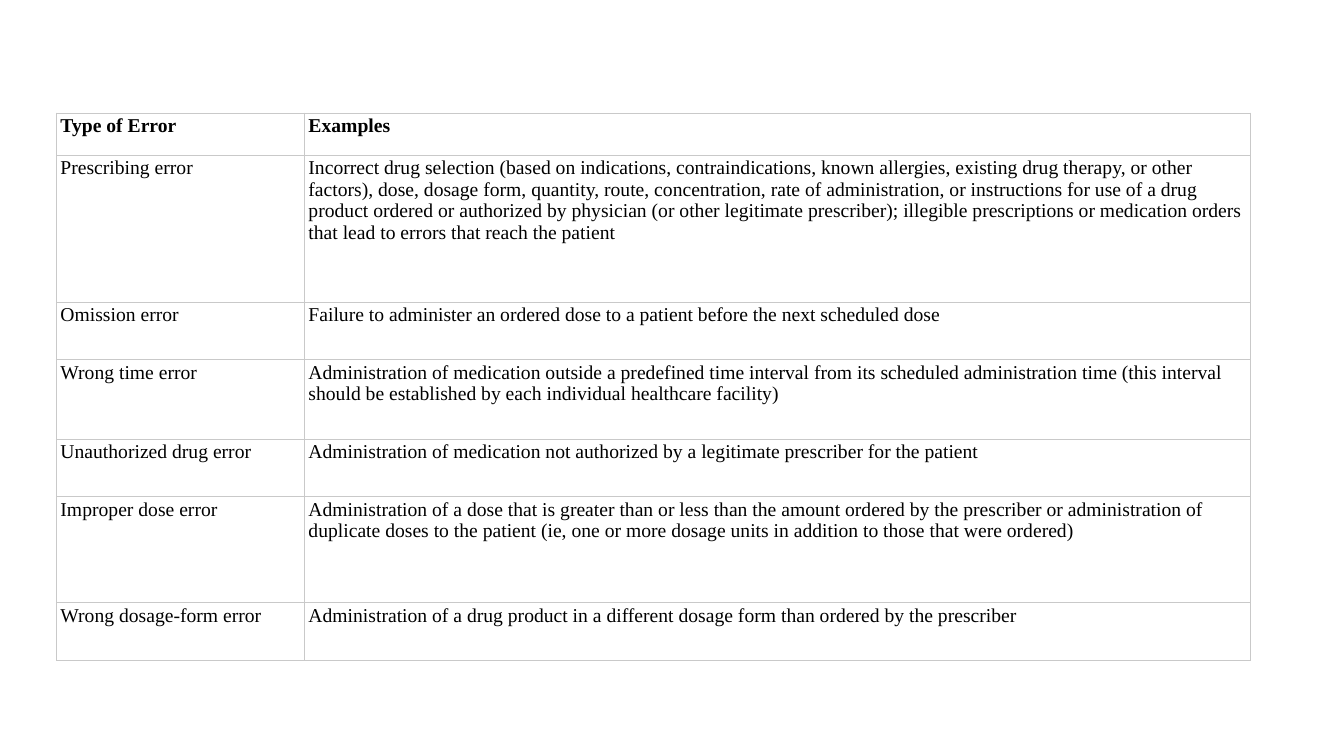
from lxml.etree import SubElement
from pptx import Presentation
from pptx.dml.color import RGBColor
from pptx.oxml.ns import qn
from pptx.util import Inches, Pt

BLACK = RGBColor(0x00, 0x00, 0x00)
WHITE = RGBColor(0xFF, 0xFF, 0xFF)
RULE_GREY = RGBColor(0xC9, 0xC9, 0xC9)

COLUMN_WIDTHS = (2.46, 9.38)
ERROR_ROWS = [
    (0.42, "Type of Error", "Examples"),
    (1.46, "Prescribing error",
     "Incorrect drug selection (based on indications, contraindications, known allergies, "
     "existing drug therapy, or other factors), dose, dosage form, quantity, route, "
     "concentration, rate of administration, or instructions for use of a drug product "
     "ordered or authorized by physician (or other legitimate prescriber); illegible "
     "prescriptions or medication orders that lead to errors that reach the patient"),
    (0.57, "Omission error",
     "Failure to administer an ordered dose to a patient before the next scheduled dose"),
    (0.79, "Wrong time error",
     "Administration of medication outside a predefined time interval from its scheduled "
     "administration time (this interval should be established by each individual "
     "healthcare facility)"),
    (0.57, "Unauthorized drug error",
     "Administration of medication not authorized by a legitimate prescriber for the patient"),
    (1.05, "Improper dose error",
     "Administration of a dose that is greater than or less than the amount ordered by the "
     "prescriber or administration of duplicate doses to the patient (ie, one or more dosage "
     "units in addition to those that were ordered)"),
    (0.57, "Wrong dosage-form error",
     "Administration of a drug product in a different dosage form than ordered by the prescriber"),
]


class SlideBuilder:
    font_name = "Times New Roman"
    font_size = Pt(14)
    border_width = Pt(0.6)

    def __init__(self, slide):
        self.slide = slide

    def add_table(self, left, top, column_widths, rows):
        total_height = sum(height for height, *_ in rows)
        table = self.slide.shapes.add_table(
            len(rows), len(column_widths), Inches(left), Inches(top),
            Inches(sum(column_widths)), Inches(total_height)).table
        table.horz_banding = False
        for column, width in zip(table.columns, column_widths):
            column.width = Inches(width)
        for index, (height, *texts) in enumerate(rows):
            table.rows[index].height = Inches(height)
            for cell, text in zip(table.rows[index].cells, texts):
                self.fill_cell(cell, text, bold=index == 0)

    def fill_cell(self, cell, text, bold):
        cell.margin_left = cell.margin_right = Inches(0.04)
        cell.margin_top = cell.margin_bottom = Inches(0.02)
        cell.text_frame.text = text
        font = cell.text_frame.paragraphs[0].runs[0].font
        font.name = self.font_name
        font.size = self.font_size
        font.bold = bold
        font.color.rgb = BLACK
        self.add_borders(cell)
        cell.fill.solid()
        cell.fill.fore_color.rgb = WHITE

    def add_borders(self, cell):
        properties = cell._tc.get_or_add_tcPr()
        for side in ("a:lnL", "a:lnR", "a:lnT", "a:lnB"):
            border = SubElement(properties, qn(side), w=str(int(self.border_width)))
            line_fill = SubElement(border, qn("a:solidFill"))
            SubElement(line_fill, qn("a:srgbClr"), val=str(RULE_GREY))


def main():
    deck = Presentation()
    deck.slide_width = Inches(13.33)
    deck.slide_height = Inches(7.5)
    builder = SlideBuilder(deck.slides.add_slide(deck.slide_layouts[6]))
    builder.add_table(0.56, 1.12, COLUMN_WIDTHS, ERROR_ROWS)
    deck.save("out.pptx")


if __name__ == "__main__":
    main()
